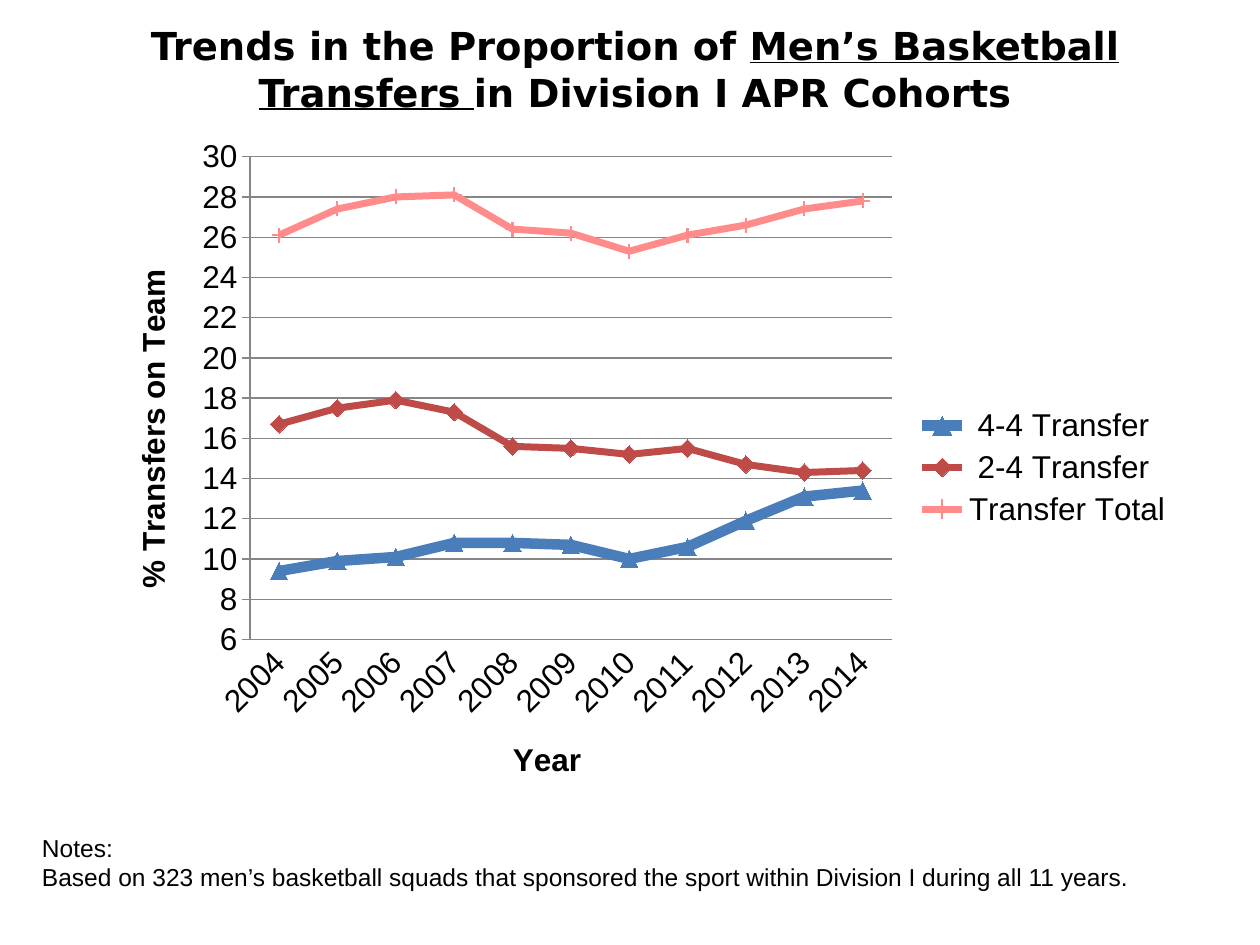
from lxml import etree
from pptx import Presentation
from pptx.chart.data import CategoryChartData
from pptx.dml.color import RGBColor
from pptx.enum.chart import XL_CHART_TYPE, XL_LEGEND_POSITION, XL_MARKER_STYLE, XL_TICK_MARK
from pptx.enum.text import MSO_ANCHOR, PP_ALIGN
from pptx.oxml.ns import qn
from pptx.util import Pt

PX = 914400 // 126
LINE = XL_CHART_TYPE.LINE_MARKERS
RIGHT = XL_LEGEND_POSITION.RIGHT
MARK = XL_MARKER_STYLE
TICK = XL_TICK_MARK
MIDDLE, CENTER = MSO_ANCHOR.MIDDLE, PP_ALIGN.CENTER
COLORS = {"text": "000000", "four": "4A7EBB", "two": "BE4B48", "total": "FF8B8B", "grid": "868686"}

TITLE = [("Trends in the Proportion of ", False), ("Men’s Basketball Transfers ", True),
         ("in Division I APR Cohorts", False)]
NOTES = ["Notes:", "Based on 323 men’s basketball squads that sponsored the sport "
         "within Division I during all 11 years."]
YEARS = [str(year) for year in range(2004, 2015)]
SERIES = [
    (" 4-4 Transfer", [9.4, 9.9, 10.1, 10.8, 10.8, 10.7, 10, 10.6, 11.9, 13.1, 13.4],
     "four", 6, MARK.TRIANGLE, 10),
    (" 2-4 Transfer", [16.7, 17.5, 17.9, 17.3, 15.6, 15.5, 15.2, 15.5, 14.7, 14.3, 14.4],
     "two", 4, MARK.DIAMOND, 10),
    ("Transfer Total", [26.1, 27.4, 28, 28.1, 26.4, 26.2, 25.3, 26.1, 26.6, 27.4, 27.8],
     "total", 4, MARK.PLUS, 8),
]


def color(name):
    return RGBColor.from_string(COLORS[name])


def style(font, size, name, bold=False):
    font.size, font.name, font.bold = Pt(size), name, bold
    font.color.rgb = color("text")


def add_box(slide, *spot):
    box = slide.shapes.add_textbox(*(v * PX for v in spot))
    box.text_frame.word_wrap = True
    return box.text_frame


def add_title(slide):
    frame = add_box(slide, 63, 21, 1144, 95)
    frame.vertical_anchor = MIDDLE
    para = frame.paragraphs[0]
    para.alignment = CENTER
    for text, under in TITLE:
        run = para.add_run()
        run.text = text
        run.font.underline = under
    style(para.font, 22, "DejaVu Sans", True)


def add_notes(slide):
    frame = add_box(slide, 42, 833, 1176, 59)
    frame.margin_left = frame.margin_top = frame.margin_bottom = 0
    frame.margin_right = 2 * PX
    frame.text = "\n".join(NOTES)
    for para in frame.paragraphs:
        props = para._p.get_or_add_pPr()
        props.set("marL", str(48 * PX))
        props.set("indent", str(-48 * PX))
        style(para.font, 14, "Arial")


def set_axis(axis, title, tick):
    axis.has_title = True
    frame = axis.axis_title.text_frame
    frame.text = title
    style(frame.paragraphs[0].font, 18, "Arial", True)
    axis.major_tick_mark = tick
    axis.minor_tick_mark = TICK.NONE
    axis.format.line.color.rgb = color("grid")
    style(axis.tick_labels.font, 18, "Arial")


def set_series(series, name, width, mark, size):
    series.smooth = False
    line, marker = series.format.line, series.marker
    line.color.rgb = color(name)
    line.width = Pt(width)
    marker.style, marker.size = mark, size
    marker.format.line.color.rgb = color(name)
    if mark == MARK.PLUS:
        marker.format.fill.background()
    else:
        marker.format.fill.solid()
        marker.format.fill.fore_color.rgb = color(name)


def set_plot(chart, **place):
    area = chart._chartSpace.chart.plotArea
    for old in area.findall(qn("c:layout")):
        area.remove(old)
    layout = etree.Element(qn("c:layout"))
    area.insert(0, layout)
    manual = etree.SubElement(layout, qn("c:manualLayout"))
    parts = {"layoutTarget": "inner", "xMode": "edge", "yMode": "edge", **place}
    for key, value in parts.items():
        etree.SubElement(manual, qn("c:" + key)).set("val", str(value))


def add_chart(slide):
    data = CategoryChartData()
    data.categories = YEARS
    for name, values, *_ in SERIES:
        data.add_series(name, values)
    spot = (v * PX for v in (105, 126, 1081, 683))
    chart = slide.shapes.add_chart(LINE, *spot, data).chart
    style(chart.font, 18, "Arial")
    chart.has_title = False
    chart.has_legend = True
    chart.legend.position = RIGHT
    chart.legend.include_in_layout = False
    style(chart.legend.font, 18, "Arial")
    chart.plots[0].vary_by_categories = False
    years, share = chart.category_axis, chart.value_axis
    set_axis(years, "Year", TICK.NONE)
    years.tick_labels.font
    years._element.find(qn("c:txPr")).find(qn("a:bodyPr")).set("rot", "-2700000")
    set_axis(share, "% Transfers on Team", TICK.OUTSIDE)
    share.minimum_scale, share.maximum_scale, share.major_unit = 6, 30, 2
    share.tick_labels.number_format = "0"
    share.tick_labels.number_format_is_linked = False
    share.major_gridlines.format.line.color.rgb = color("grid")
    for series, (_, _, *look) in zip(chart.plots[0].series, SERIES):
        set_series(series, *look)
    set_plot(chart, x=0.134, y=0.045, w=0.594, h=0.707)


def main():
    """Build the slide on men's basketball transfers."""
    deck = Presentation()
    deck.slide_width, deck.slide_height = 1260 * PX, 945 * PX
    slide = deck.slides.add_slide(deck.slide_layouts[6])
    add_title(slide)
    add_notes(slide)
    add_chart(slide)
    deck.save("out.pptx")


if __name__ == "__main__":
    main()
